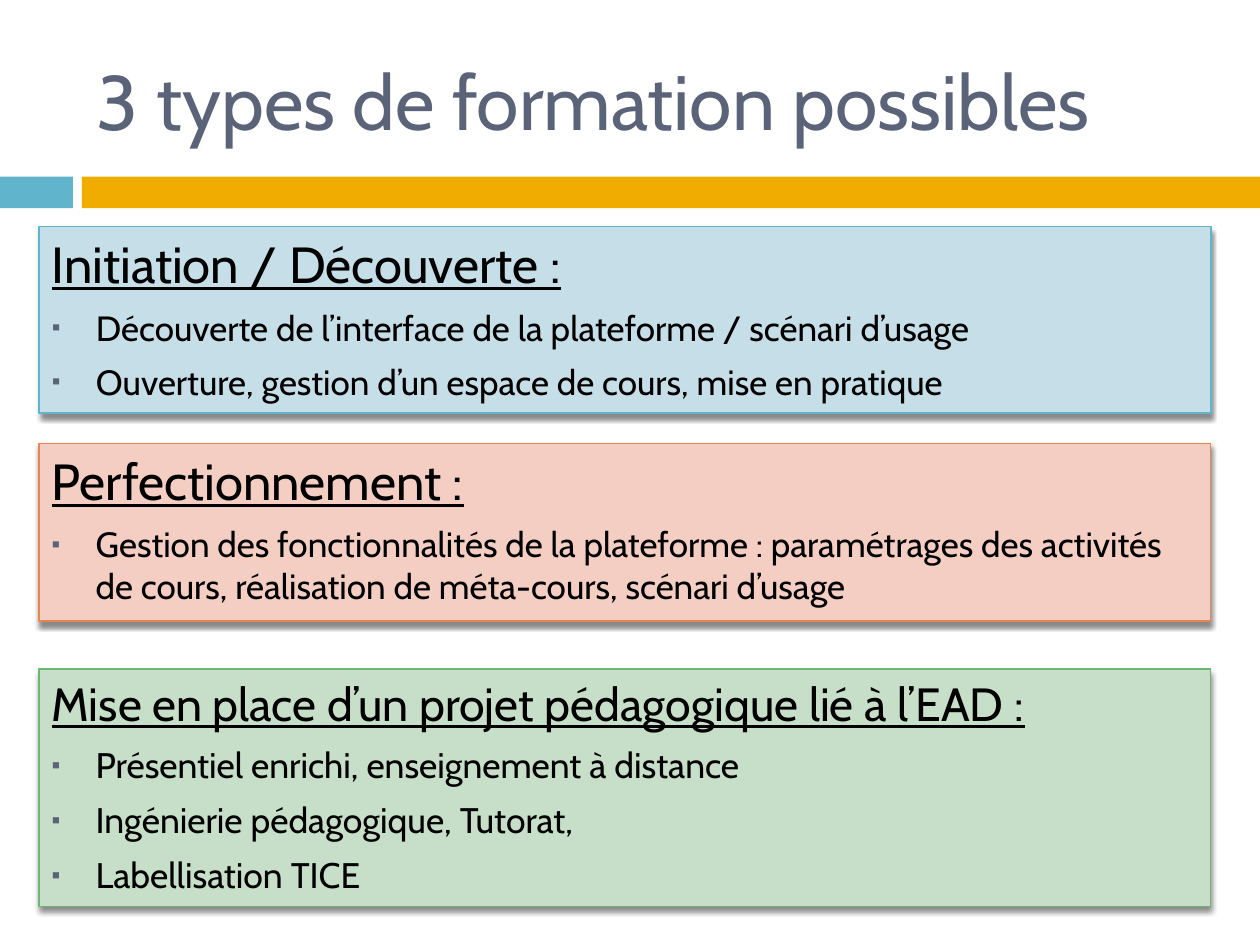
from lxml import etree
from pptx import Presentation
from pptx.dml.color import RGBColor
from pptx.enum import shapes, text
from pptx.oxml import ns
from pptx.util import Cm, Pt

FONT = "Cabin"
INK = "000000"
SLATE = "5A6378"
TITLE = "3 types de formation possibles"

# left, width, colour
BANDS = [(0, 1.47, "60B5CC"), (1.65, 23.75, "F0AD00")]
BAND_TOP, BAND_HEIGHT = 3.56, 0.64

PANEL_LEFT, PANEL_WIDTH = 0.79, 23.62
PANELS = [
    dict(top=4.57, height=3.76, fill="C5DEE7", line="60B5CC",
         heading="Initiation / Découverte :", heading_size=29, heading_gap=7, item_size=20,
         items=["Découverte de l’interface de la plateforme / scénari d’usage",
                "Ouverture, gestion d’un espace de cours, mise en pratique"]),
    dict(top=8.94, height=3.58, fill="F4CEC2", line="E88651",
         heading="Perfectionnement :", heading_size=29, heading_gap=7, item_size=20,
         items=["Gestion des fonctionnalités de la plateforme : paramétrages des activités "
                "de cours, réalisation de méta-cours, scénari d’usage"]),
    dict(top=13.49, height=4.78, fill="C7DFC8", line="6BB76D",
         heading="Mise en place d’un projet pédagogique lié à l’EAD :",
         heading_size=26.6, heading_gap=0, item_size=20.3,
         items=["Présentiel enrichi, enseignement à distance",
                "Ingénierie pédagogique, Tutorat,",
                "Labellisation TICE"]),
]


def rgb(value):
    return RGBColor.from_string(value)


def add_node(parent, tag, **attributes):
    node = etree.SubElement(parent, ns.qn(tag))
    for key, value in attributes.items():
        node.set(key, str(value))
    return node


def place(shape, left, top, width, height):
    box = dict(left=left, top=top, width=width, height=height)
    for side, length in box.items():
        setattr(shape, side, Cm(length))


def set_frame(shape, anchor):
    settings = dict(word_wrap=True, auto_size=text.MSO_AUTO_SIZE.NONE, vertical_anchor=anchor)
    for key, value in settings.items():
        setattr(shape.text_frame, key, value)


def write(paragraph, words, size, color=INK, underline=False, gap=0):
    layout = dict(alignment=text.PP_ALIGN.LEFT, space_before=Pt(gap),
                  space_after=Pt(0), line_spacing=1.0)
    for key, value in layout.items():
        setattr(paragraph, key, value)
    run = paragraph.add_run()
    run.text = words
    for key, value in dict(name=FONT, size=Pt(size), underline=underline, bold=False).items():
        setattr(run.font, key, value)
    run.font.color.rgb = rgb(color)


def set_bullet(paragraph, mark=None):
    """Hang the paragraph on a small square mark, or clear its bullet."""
    properties = paragraph._p.get_or_add_pPr()
    hang = Cm(0.89) if mark else 0
    properties.set("marL", str(hang))
    properties.set("indent", str(-hang))
    if not mark:
        add_node(properties, "a:buNone")
        return
    add_node(add_node(properties, "a:buClr"), "a:srgbClr", val=SLATE)
    add_node(properties, "a:buSzPct", val=70000)
    add_node(properties, "a:buFont", typeface="Arial")
    add_node(properties, "a:buChar", char=mark)


def add_shadow(shape):
    shape.shadow.inherit = False
    effects = shape._element.spPr.find(ns.qn("a:effectLst"))
    shadow = add_node(effects, "a:outerShdw", blurRad=Pt(3), dist=Pt(2.4),
                      dir=90 * 60000, algn="ctr", rotWithShape=0)
    add_node(add_node(shadow, "a:srgbClr", val="000000"), "a:alpha", val=45000)


def fill_panel(shape, panel):
    place(shape, PANEL_LEFT, panel["top"], PANEL_WIDTH, panel["height"])
    shape.fill.solid()
    shape.fill.fore_color.rgb = rgb(panel["fill"])
    shape.line.color.rgb = rgb(panel["line"])
    shape.line.width = Pt(0.79)
    add_shadow(shape)
    set_frame(shape, text.MSO_ANCHOR.TOP)
    frame = shape.text_frame
    heading = frame.paragraphs[0]
    write(heading, panel["heading"], panel["heading_size"],
          underline=True, gap=panel["heading_gap"])
    set_bullet(heading)
    for item in panel["items"]:
        paragraph = frame.add_paragraph()
        write(paragraph, item, panel["item_size"], gap=7)
        set_bullet(paragraph, "▪")


def main():
    deck = Presentation()
    deck.slide_width, deck.slide_height = Cm(25.4), Cm(19.05)
    slide = deck.slides.add_slide(deck.slide_layouts[1])
    title, body = slide.placeholders

    def add_rectangle():
        return slide.shapes.add_shape(shapes.MSO_SHAPE.RECTANGLE, 0, 0, 0, 0)

    for left, width, color in BANDS:
        band = add_rectangle()
        place(band, left, BAND_TOP, width, BAND_HEIGHT)
        band.fill.solid()
        band.fill.fore_color.rgb = rgb(color)
        band.line.fill.background()
        band.shadow.inherit = False

    place(title, 1.7, 0.64, 22.66, 2.74)
    set_frame(title, text.MSO_ANCHOR.MIDDLE)
    write(title.text_frame.paragraphs[0], TITLE, 44, SLATE)

    for index, panel in enumerate(PANELS):
        fill_panel(add_rectangle() if index else body, panel)

    deck.save("out.pptx")


if __name__ == "__main__":
    main()
